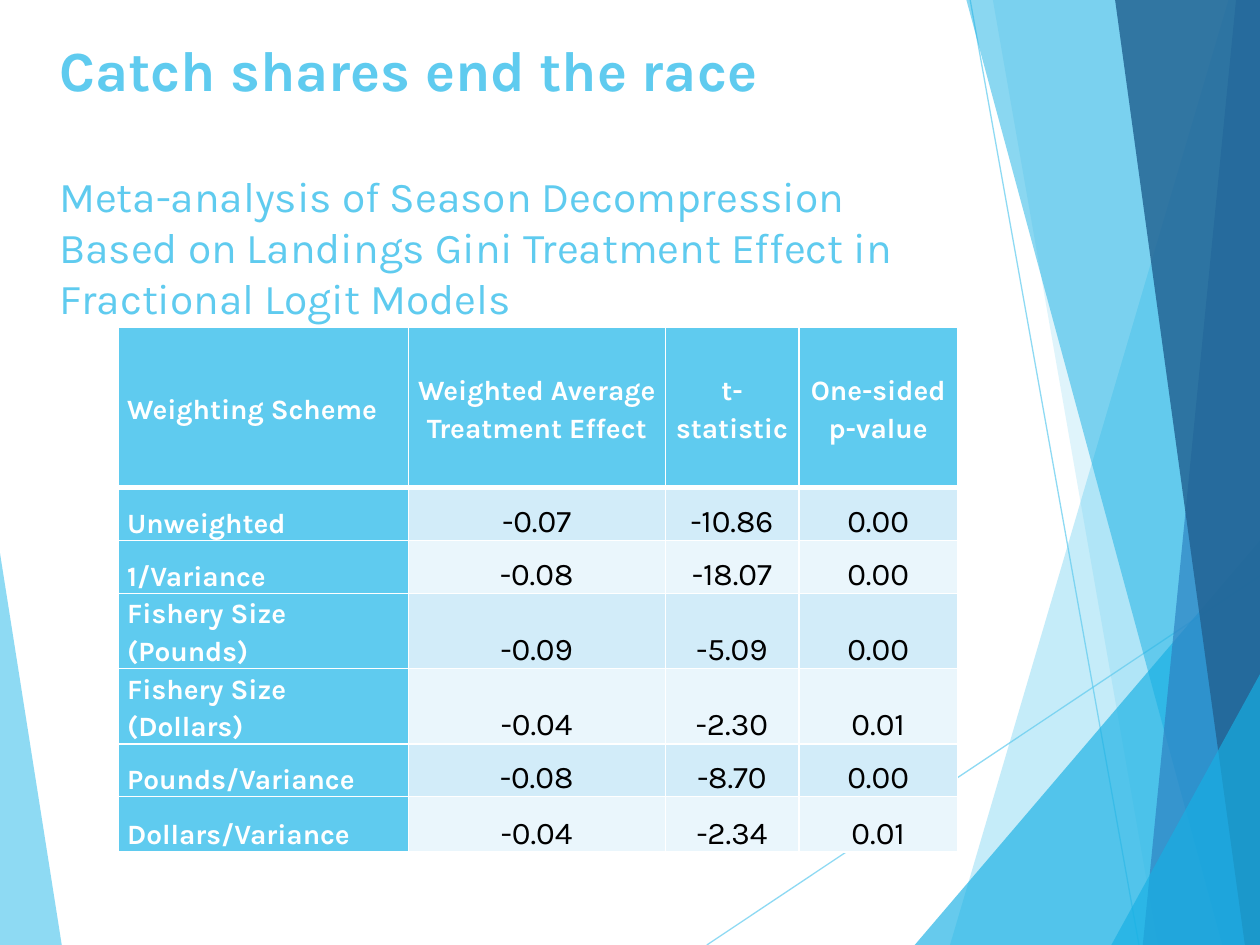
"""Build the catch shares slide with its season decompression table."""
import pptx
import pptx.dml.color
import pptx.enum.shapes
import pptx.enum.text
import pptx.oxml
import pptx.oxml.ns
import pptx.util

Inches, Pt = pptx.util.Inches, pptx.util.Pt
ALIGN, ANCHOR = pptx.enum.text.PP_ALIGN, pptx.enum.text.MSO_ANCHOR
FONT = "Karla"
SKY, CYAN, BLUE, NAVY = "5FCBEF", "17B0E4", "2E83C3", "226292"
WHITE, BLACK = "FFFFFF", "000000"
BANDS = ["D2ECF9", "EAF6FC"]

HEADING = [
    ("Catch shares end the race", 32.4, True, 0),
    ("Meta-analysis of Season Decompression Based on Landings Gini "
     "Treatment Effect in Fractional Logit Models", 24.3, False, 38),
]
ROWS = [
    ("Weighting Scheme", "Weighted Average Treatment Effect", "t-statistic", "One-sided p-value"),
    ("Unweighted", "-0.07", "-10.86", "0.00"),
    ("1/Variance", "-0.08", "-18.07", "0.00"),
    ("Fishery Size (Pounds)", "-0.09", "-5.09", "0.00"),
    ("Fishery Size (Dollars)", "-0.04", "-2.30", "0.01"),
    ("Pounds/Variance", "-0.08", "-8.70", "0.00"),
    ("Dollars/Variance", "-0.04", "-2.34", "0.01"),
]
COLUMN_WIDTHS = [2.3, 2.04, 1.06, 1.26]
ROW_HEIGHTS = [1.27] + [0.42] * 5 + [0.44]

LEFT_SHARD = [([(0, 4.39), (0.49, 7.5), (0, 7.5)], SKY, 70)]
RAYS = [((5.61, 7.5), (10, 4.57)), ((7.7, 0), (9.04, 7.5))]
RIGHT_SHARDS = [
    ([(9.75, 0), (7.54, 7.5), (10, 7.5), (10, 0)], SKY, 36),
    ([(7.88, 0), (9.19, 7.5), (10, 7.5), (10, 0)], SKY, 20),
    ([(7.26, 7.5), (10, 4.29), (10, 7.5)], CYAN, 66),
    ([(7.67, 0), (9.7, 7.5), (10, 7.5), (10, 0)], CYAN, 50),
    ([(9.81, 0), (9.07, 7.5), (10, 7.5), (10, 0)], BLUE, 70),
    ([(8.85, 0), (9.88, 7.5), (10, 7.5), (10, 0)], NAVY, 82),
    ([(8.82, 7.5), (10, 5.35), (10, 7.5)], CYAN, 66),
]


def rgb(value):
    return pptx.dml.color.RGBColor.from_string(value)


def paint(fill, color, opacity=100):
    fill.solid()
    fill.fore_color.rgb = rgb(color)
    if opacity < 100:
        srgb = fill._xPr.find(".//" + pptx.oxml.ns.qn("a:srgbClr"))
        pptx.oxml.ns.qn("a:alpha")
        alpha = srgb.makeelement(pptx.oxml.ns.qn("a:alpha"), {"val": str(opacity * 1000)})
        srgb.append(alpha)


def style(font, size, color, bold):
    font.name, font.size, font.bold = FONT, Pt(size), bold
    font.color.rgb = rgb(color)


def add_shards(slide, shards):
    for points, color, opacity in shards:
        corners = [(Inches(x), Inches(y)) for x, y in points]
        builder = slide.shapes.build_freeform(*corners[0])
        builder.add_line_segments(corners[1:], close=True)
        shard = builder.convert_to_shape()
        shard.shadow.inherit = False
        paint(shard.fill, color, opacity)
        shard.line.fill.background()


def add_rays(slide):
    for start, end in RAYS:
        ray = slide.shapes.add_connector(
            pptx.enum.shapes.MSO_CONNECTOR.STRAIGHT, *map(Inches, start + end))
        ray.line.width = Pt(0.75)
        paint(ray.line.fill, SKY, 70)
        properties = ray._element.spPr
        properties.append(properties.makeelement(pptx.oxml.ns.qn("a:effectLst"), {}))


def add_heading(slide):
    title = slide.shapes.title
    title.left, title.top, title.width, title.height = map(Inches, (0.37, 0.23, 7.22, 1.44))
    frame = title.text_frame
    frame.word_wrap = True
    frame.auto_size = pptx.enum.text.MSO_AUTO_SIZE.NONE
    frame.vertical_anchor = ANCHOR.TOP
    frame.text = "\n".join(text for text, *_ in HEADING)
    for paragraph, (_, size, bold, gap) in zip(frame.paragraphs, HEADING):
        paragraph.alignment = ALIGN.LEFT
        paragraph.space_before = Pt(gap)
        style(paragraph.font, size, SKY, bold)


def add_borders(cell, widths):
    properties = cell._tc.get_or_add_tcPr()
    for side, width in zip("LRTB", widths):
        properties.append(pptx.oxml.parse_xml(
            f'<a:ln{side} {pptx.oxml.ns.nsdecls("a")} w="{Pt(width)}"><a:solidFill>'
            f'<a:srgbClr val="{WHITE}"/></a:solidFill></a:ln{side}>'))


def add_results(slide):
    table = slide.shapes.add_table(
        len(ROWS), len(COLUMN_WIDTHS), Inches(0.94), Inches(2.6),
        Inches(sum(COLUMN_WIDTHS)), Inches(sum(ROW_HEIGHTS))).table
    for column, width in zip(table.columns, COLUMN_WIDTHS):
        column.width = Inches(width)
    for r, (labels, height) in enumerate(zip(ROWS, ROW_HEIGHTS)):
        table.rows[r].height = Inches(height)
        for c, label in enumerate(labels):
            cell = table.cell(r, c)
            is_label = r == 0 or c == 0
            add_borders(cell, (1, 1, 3 if r == 1 else 1, 3 if r == 0 else 1))
            paint(cell.fill, SKY if is_label else BANDS[(r - 1) % 2])
            cell.margin_left = cell.margin_right = Inches(0.07)
            cell.margin_top = cell.margin_bottom = 0
            cell.vertical_anchor = ANCHOR.BOTTOM if r else ANCHOR.MIDDLE
            cell.text = label
            paragraph = cell.text_frame.paragraphs[0]
            paragraph.alignment = ALIGN.CENTER if c else ALIGN.LEFT
            paragraph.line_spacing = 1.15
            style(paragraph.font, 16 if is_label else 18, WHITE if is_label else BLACK, is_label)


def main():
    deck = pptx.Presentation()
    deck.slide_width, deck.slide_height = Inches(10), Inches(7.5)
    slide = deck.slides.add_slide(deck.slide_layouts[5])
    paint(slide.background.fill, WHITE)
    add_shards(slide, LEFT_SHARD)
    add_rays(slide)
    add_shards(slide, RIGHT_SHARDS)
    add_heading(slide)
    add_results(slide)
    deck.save("out.pptx")


if __name__ == "__main__":
    main()
